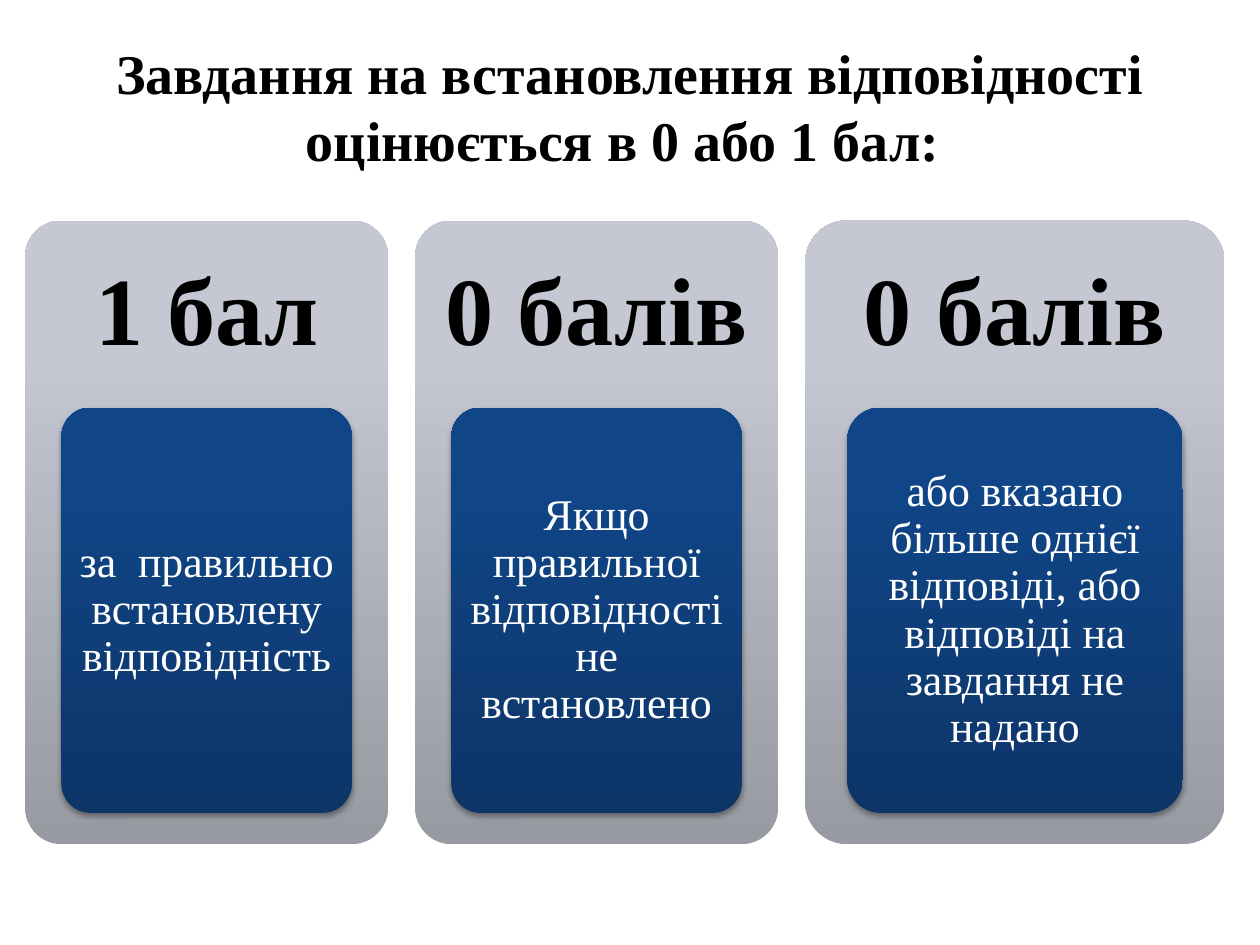
import copy

import pptx
import pptx.dml.color
import pptx.enum.shapes
import pptx.enum.text
import pptx.oxml
import pptx.oxml.ns
import pptx.util

COLORS = {"title": "000000", "body": "FFFFFF"}
GRADIENTS = {
    "panel": ((0, "989AA2"), (0.8, "C5C8D2"), (1, "C5C9D3")),
    "card": ((0, "0D3568"), (0.8, "104587"), (1, "0E458A")),
}
SHADOW = (
    '<a:outerShdw %s blurRad="40000" dist="23000" dir="5400000" rotWithShape="0">'
    '<a:srgbClr val="000000"><a:alpha val="35000"/></a:srgbClr></a:outerShdw>'
    % pptx.oxml.ns.nsdecls("a")
)
SLIDE_W, SLIDE_H = 10, 7.5


class Deck:
    font = "Times New Roman"

    def __init__(self):
        self.prs = pptx.Presentation()
        self.prs.slide_width = pptx.util.Inches(SLIDE_W)
        self.prs.slide_height = pptx.util.Inches(SLIDE_H)
        self.s = self.prs.slides.add_slide(self.prs.slide_layouts[6])

    def box(self, x, y, w, h):
        width, height = self.prs.slide_width, self.prs.slide_height
        return int(x * width), int(y * height), int(w * width), int(h * height)

    def text(self, at, text, size, color, bold=False, inset=(0.1, 0.05), spacing=1.0):
        tf = self.s.shapes.add_textbox(*self.box(*at)).text_frame
        tf.word_wrap = True
        tf.vertical_anchor = pptx.enum.text.MSO_ANCHOR.MIDDLE
        tf.margin_left = tf.margin_right = pptx.util.Inches(inset[0])
        tf.margin_top = tf.margin_bottom = pptx.util.Inches(inset[1])
        p = tf.paragraphs[0]
        p.text = text
        p.alignment = pptx.enum.text.PP_ALIGN.CENTER
        p.line_spacing = spacing
        p.font.name = self.font
        p.font.size = pptx.util.Pt(size)
        p.font.bold = bold
        p.font.color.rgb = pptx.dml.color.RGBColor.from_string(COLORS[color])

    def rounded(self, at, gradient, shadow=False):
        kind = pptx.enum.shapes.MSO_SHAPE.ROUNDED_RECTANGLE
        sp = self.s.shapes.add_shape(kind, *self.box(*at))
        sp.adjustments[0] = 0.1
        sp.line.fill.background()
        sp.fill.gradient()
        sp.fill.gradient_angle = 90
        props = sp._element.spPr
        stops = props.find(".//" + pptx.oxml.ns.qn("a:gsLst"))
        stops.append(copy.deepcopy(stops[-1]))
        for stop, (position, color) in zip(sp.fill.gradient_stops, GRADIENTS[gradient]):
            stop.position = position
            stop.color.rgb = pptx.dml.color.RGBColor.from_string(color)
        sp.shadow.inherit = False
        if shadow:
            effects = props.find(pptx.oxml.ns.qn("a:effectLst"))
            effects.append(pptx.oxml.parse_xml(SHADOW))

    def column(self, x, w, heading, body):
        top, height = 1.75 / SLIDE_H, 0.66
        self.rounded((x, top, w, height), "panel")
        self.text((x, top, w, 0.3 * height), heading, 55, "title", True, (0.23, 0.23), 0.9)
        cx, cy, cw, ch = x + 0.1 * w, top + 0.3 * height, 0.8 * w, 0.65 * height
        self.rounded((cx, cy, cw, ch), "card", True)
        dx = 0.029 * cw
        dy = dx * SLIDE_W / SLIDE_H
        inner = (cx + dx, cy + dy, cw - 2 * dx, ch - 2 * dy)
        self.text(inner, body, 25, "body", inset=(0.07, 0.05), spacing=0.9)


def main():
    deck = Deck()
    deck.text(
        (0.05, 0.017, 0.9, 0.19),
        "Завдання на встановлення відповідності оцінюється в 0 або 1 бал: ",
        32, "title", True,
    )
    columns = (
        (0.288, "1 бал", "за  правильно встановлену відповідність"),
        (0.288, "0 балів", "Якщо правильної відповідності не встановлено"),
        (0.333, "0 балів",
         "або вказано більше однієї відповіді, або відповіді на завдання не надано"),
    )
    x, gap = 0.02, 0.0215
    for width, heading, body in columns:
        deck.column(x, width, heading, body)
        x += width + gap
    deck.prs.save("out.pptx")


if __name__ == "__main__":
    main()
